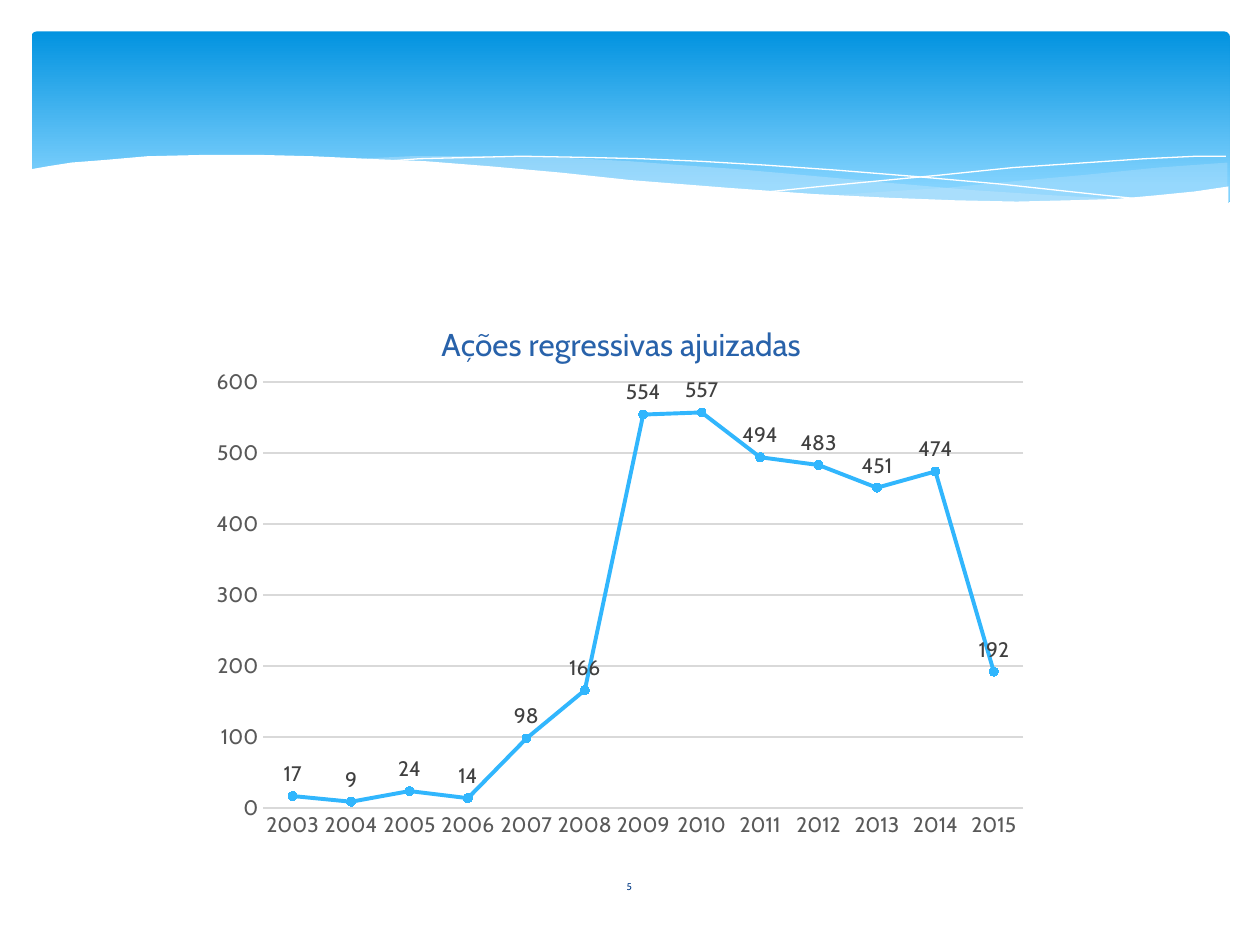
from dataclasses import dataclass

from lxml import etree
from pptx import Presentation
from pptx.chart import data as chart_data
from pptx.dml import color
from pptx.enum import chart as charts, shapes, text
from pptx.oxml import ns
from pptx.util import Pt

SCALE = 9144
FONT = "Cabin"
BLUE = "31B6FD"
GREY = "595959"


@dataclass
class Wave:
    points: list[tuple[int, int]]
    fill: str | None = None
    opacity: int = 100
    line: str | None = None


WAVES = [
    Wave([(974, 129), (947, 131), (919, 133), (889, 136), (859, 139), (803, 144),
          (752, 149), (704, 152), (659, 155), (689, 157), (730, 159), (779, 160),
          (833, 160), (879, 159), (919, 156), (948, 152), (974, 148)],
         fill="C6E7FC", opacity=29),
    Wave([(891, 158), (835, 155), (773, 151), (704, 145), (627, 138), (582, 134),
          (539, 131), (500, 128), (463, 126), (418, 124), (378, 124), (326, 124),
          (285, 126), (340, 129), (402, 134), (448, 138), (528, 146), (582, 150),
          (632, 154), (678, 157), (734, 159), (783, 161), (836, 161), (874, 159)],
         fill="C6E7FC", opacity=40),
    Wave([(307, 128), (333, 126), (373, 125), (414, 124), (467, 125), (508, 126),
          (555, 128), (606, 131), (663, 135), (725, 140), (793, 146), (867, 154),
          (905, 158)], line="FFFFFF"),
    Wave([(612, 152), (651, 148), (693, 144), (746, 139), (804, 133), (864, 129),
          (908, 126), (949, 124), (973, 124)], line="FFFFFF"),
    Wave([(975, 148), (948, 152), (918, 155), (885, 158), (848, 159), (807, 160),
          (759, 159), (706, 157), (646, 154), (577, 149), (501, 143), (445, 137),
          (389, 132), (338, 128), (291, 126), (248, 124), (209, 123), (159, 123),
          (117, 124), (83, 127), (57, 129), (38, 132), (21, 135), (21, 181),
          (975, 181)], fill="FFFFFF"),
]

ACTIONS = {2003: 17, 2004: 9, 2005: 24, 2006: 14, 2007: 98, 2008: 166, 2009: 554,
           2010: 557, 2011: 494, 2012: 483, 2013: 451, 2014: 474, 2015: 192}


def px(*lengths: int) -> list[int]:
    return [length * SCALE for length in lengths]


def rgb(value: str) -> color.RGBColor:
    return color.RGBColor.from_string(value)


def style_font(font, size: float, value: str) -> None:
    font.name = FONT
    font.size = Pt(size)
    font.bold = False
    font.color.rgb = rgb(value)


def draw_band(page) -> None:
    band = page.shapes.add_shape(shapes.MSO_SHAPE.ROUNDED_RECTANGLE, *px(25, 25, 951, 137))
    band.adjustments[0] = 0.03
    band.shadow.inherit = False
    band.line.fill.background()
    band.fill.gradient()
    band.fill.gradient_angle = 270
    stops = zip(band.fill.gradient_stops, (("0293E0", 0), ("83D3FE", 0.9)))
    for stop, (value, position) in stops:
        stop.color.rgb = rgb(value)
        stop.position = position


def draw_wave(page, wave: Wave) -> None:
    builder = page.shapes.build_freeform(*wave.points[0], scale=SCALE)
    builder.add_line_segments(wave.points[1:], close=wave.fill is not None)
    shape = builder.convert_to_shape()
    shape.shadow.inherit = False
    if wave.fill:
        shape.fill.solid()
        shape.fill.fore_color.rgb = rgb(wave.fill)
        if wave.opacity < 100:
            tone = next(shape.element.iter(ns.qn("a:srgbClr")))
            etree.SubElement(tone, ns.qn("a:alpha"), val=str(wave.opacity * 1000))
    else:
        shape.fill.background()
    if wave.line:
        shape.line.color.rgb = rgb(wave.line)
        shape.line.width = Pt(0)
    else:
        shape.line.fill.background()


def place(parent, index: int, **settings: str | float) -> None:
    for old in parent.findall(ns.qn("c:layout")):
        parent.remove(old)
    layout = etree.Element(ns.qn("c:layout"))
    manual = etree.SubElement(layout, ns.qn("c:manualLayout"))
    for name, value in settings.items():
        etree.SubElement(manual, ns.qn(f"c:{name}"), val=str(value))
    parent.insert(index, layout)


def draw_chart(page) -> None:
    data = chart_data.CategoryChartData()
    data.categories = [str(year) for year in ACTIONS]
    data.add_series("Series 1", ACTIONS.values())
    chart = page.shapes.add_chart(
        charts.XL_CHART_TYPE.LINE_MARKERS_STACKED, *px(159, 229, 667, 444), data).chart
    style_font(chart.font, 10, "000000")
    chart.has_legend = False

    chart.has_title = True
    title = chart.chart_title
    title.text_frame.text = "Ações regressivas ajuizadas"
    style_font(title.text_frame.paragraphs[0].runs[0].font, 18, "2862AA")
    title.include_in_layout = False
    place(title._element, 1, xMode="edge", yMode="edge", x=0.28, y=0.05)

    for axis in (chart.category_axis, chart.value_axis):
        axis.major_tick_mark = axis.minor_tick_mark = charts.XL_TICK_MARK.NONE
        axis.format.line.fill.background()
        style_font(axis.tick_labels.font, 12, GREY)
    values = chart.value_axis
    values.minimum_scale, values.maximum_scale, values.major_unit = 0, 600, 100
    values.has_major_gridlines = True
    values.major_gridlines.format.line.color.rgb = rgb("D9D9D9")
    values.major_gridlines.format.line.width = Pt(0.75)

    plot = chart.plots[0]
    plot.vary_by_categories = False
    place(plot._element.getparent(), 0, layoutTarget="inner", xMode="edge", yMode="edge",
          x=0.075, y=0.167, w=0.904, h=0.762)
    series = plot.series[0]
    series.smooth = False
    series.format.line.color.rgb = rgb(BLUE)
    series.format.line.width = Pt(2.25)
    marker = series.marker
    marker.style = charts.XL_MARKER_STYLE.CIRCLE
    marker.size = 5
    marker.format.fill.solid()
    marker.format.fill.fore_color.rgb = rgb(BLUE)
    marker.format.line.color.rgb = rgb(BLUE)
    labels = series.data_labels
    labels.show_value = True
    labels.position = charts.XL_LABEL_POSITION.ABOVE
    style_font(labels.font, 12, "404040")


def draw_number(page) -> None:
    box = page.shapes.add_textbox(*px(436, 684, 127, 40))
    frame = box.text_frame
    frame.word_wrap = True
    frame.vertical_anchor = text.MSO_ANCHOR.MIDDLE
    frame.text = "5"
    para = frame.paragraphs[0]
    para.alignment = text.PP_ALIGN.CENTER
    style_font(para.runs[0].font, 5.6, "073E87")


def main() -> None:
    deck = Presentation()
    deck.slide_width, deck.slide_height = px(1000, 750)
    page = deck.slides.add_slide(deck.slide_layouts[6])
    draw_band(page)
    for wave in WAVES:
        draw_wave(page, wave)
    draw_number(page)
    draw_chart(page)
    deck.save("out.pptx")


if __name__ == "__main__":
    main()
